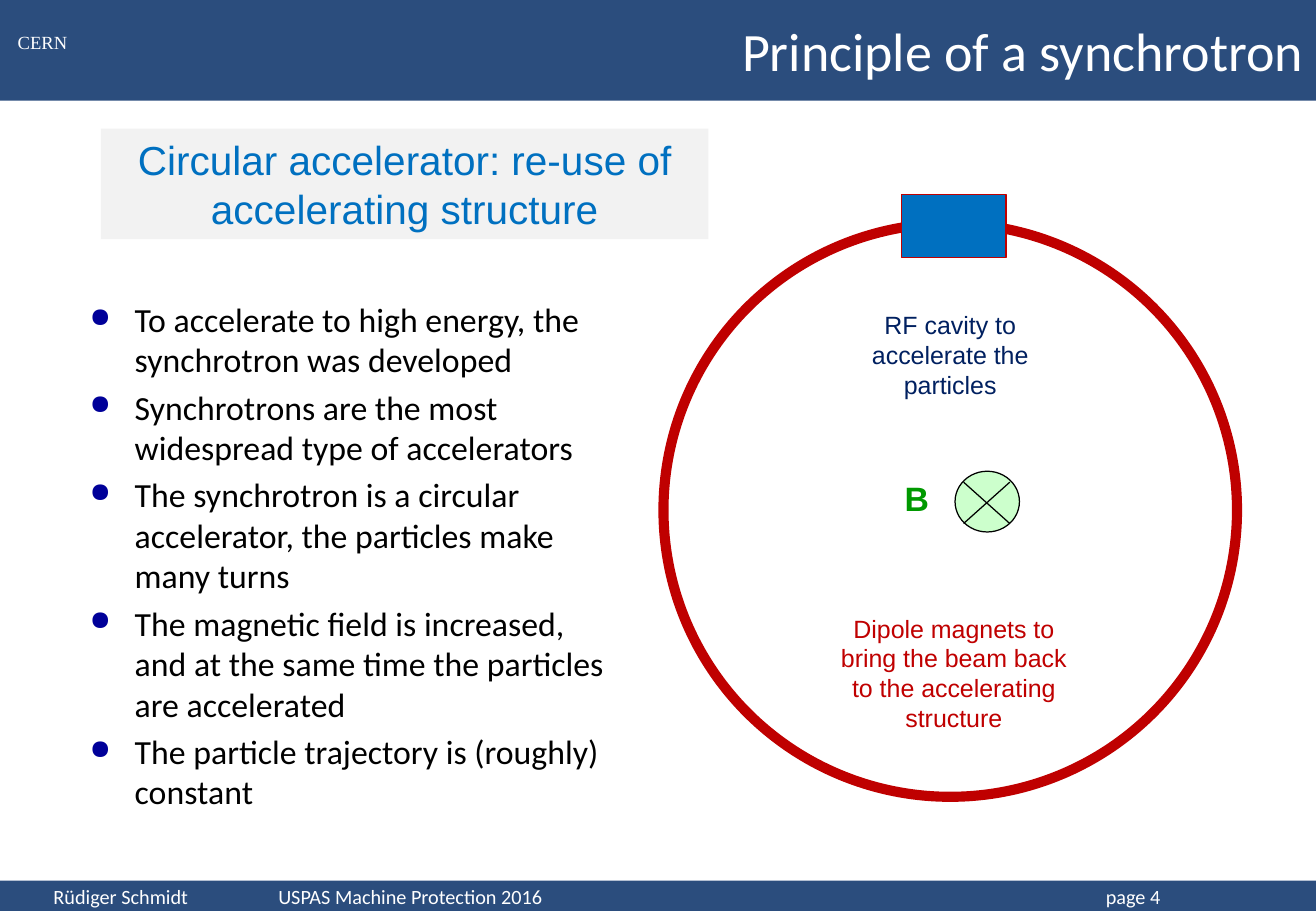
from pptx import Presentation
from pptx.util import Inches, Pt
from pptx.dml.color import RGBColor
from pptx.enum.shapes import MSO_SHAPE, MSO_CONNECTOR
from pptx.enum.text import PP_ALIGN, MSO_ANCHOR
from pptx.oxml.ns import qn
from lxml.etree import SubElement

THEME = {
    "navy": "062F67", "white": "FFFFFF", "black": "000000", "bullet": "000099",
    "ring": "BF0000", "red": "C00000", "blue": "0070C0", "ink": "002060",
    "pale": "F2F2F2", "green": "009900", "mint": "CCFFCC",
    "title": 32, "head": 24, "body": 20, "label": 14.8, "foot": 12, "tag": 11,
}


def draw(kind, area, fill=None, line=None, width=0.75):
    shape = slide.shapes.add_shape(kind, *map(Inches, area))
    shape.shadow.inherit = False
    if fill:
        shape.fill.solid()
        shape.fill.fore_color.rgb = RGBColor.from_string(THEME[fill])
    else:
        shape.fill.background()
    if line:
        shape.line.color.rgb = RGBColor.from_string(THEME[line])
        shape.line.width = Pt(width)
    else:
        shape.line.fill.background()
    return shape


def write(area, text, size, color, face="Arial", align=PP_ALIGN.CENTER, fill=None):
    box = slide.shapes.add_textbox(*map(Inches, area))
    if fill:
        box.fill.solid()
        box.fill.fore_color.rgb = RGBColor.from_string(THEME[fill])
    frame = box.text_frame
    frame.word_wrap = True
    frame.vertical_anchor = MSO_ANCHOR.MIDDLE
    frame.text = text
    for para in frame.paragraphs:
        para.alignment = align
        para.font.name = face
        para.font.size = Pt(THEME[size])
        para.font.color.rgb = RGBColor.from_string(THEME[color])
    return frame


deck = Presentation()
deck.slide_width = Inches(10.83)
deck.slide_height = Inches(7.5)
slide = deck.slides.add_slide(deck.slide_layouts[6])

for top, height in [(0, 0.83), (7.25, 0.25)]:
    band = draw(MSO_SHAPE.RECTANGLE, (0, top, 10.83, height), "navy")
    tint = band.fill._xPr.find(qn("a:solidFill"))[0]
    SubElement(tint, qn("a:alpha"), val="85000")

write((-0.01, 0.2, 0.72, 0.29), "CERN", "tag", "white", "Times New Roman")
write((0.9, 0, 9.93, 0.83), "Principle of a synchrotron", "title", "white",
      "Calibri", PP_ALIGN.RIGHT)

foot = write((0, 7.25, 10.65, 0.26),
             "Rüdiger Schmidt\tUSPAS Machine Protection 2016\tpage 4",
             "foot", "white", "Calibri", PP_ALIGN.LEFT)
foot.margin_left = Inches(0.44)
foot.margin_top = foot.margin_bottom = 0
props = foot.paragraphs[0]._p.get_or_add_pPr()
tabs = SubElement(props, qn("a:tabLst"))
props.insert(0, tabs)
for stop in (1.85, 8.66):
    SubElement(tabs, qn("a:tab"), pos=str(Inches(stop)), algn="l")

points = [
    "To accelerate to high energy, the synchrotron was developed",
    "Synchrotrons are the most widespread type of accelerators",
    "The synchrotron is a circular accelerator, the particles make many turns",
    "The magnetic field is increased, and at the same time the particles are accelerated",
    "The particle trajectory is (roughly) constant",
]
body = write((0.64, 2.41, 4.51, 4.4), "\n".join(points), "body", "black",
             "Calibri", PP_ALIGN.LEFT, "white")
body.vertical_anchor = MSO_ANCHOR.TOP
for index, para in enumerate(body.paragraphs):
    para.space_before = Pt(4 if index else 0)
    props = para._p.get_or_add_pPr()
    props.set("marL", str(Inches(0.37)))
    props.set("indent", str(Inches(-0.37)))
    color = SubElement(props, qn("a:buClr"))
    SubElement(color, qn("a:srgbClr"), val=THEME["bullet"])
    size = SubElement(props, qn("a:buSzPct"), val="80000")
    mark = SubElement(props, qn("a:buChar"), char="●")
    final = props.find(qn("a:defRPr"))
    for part in (color, size, mark):
        final.addprevious(part)

ring = draw(MSO_SHAPE.ARC, (5.46, 1.84, 4.72, 4.72), line="ring", width=6)
for index, angle in enumerate((276, 264)):
    ring.adjustments[index] = angle * 0.6
draw(MSO_SHAPE.RECTANGLE, (7.42, 1.6, 0.86, 0.52), "blue", "red")

write((6.75, 4.93, 2.2, 1.22),
      "Dipole magnets to bring the beam back to the accelerating structure",
      "label", "red")
write((6.72, 2.31, 2.2, 1.22), "RF cavity to accelerate the particles", "label", "ink")
write((0.83, 1.06, 5, 0.91), "Circular accelerator: re-use of accelerating structure",
      "head", "blue", fill="pale")
field = write((7.23, 3.88, 0.63, 0.44), "B", "body", "green")
field.paragraphs[0].font.bold = True

draw(MSO_SHAPE.OVAL, (7.86, 3.88, 0.53, 0.5), "mint", "black")
for start, end in [(7.93, 8.31), (8.31, 7.93)]:
    cross = slide.shapes.add_connector(
        MSO_CONNECTOR.STRAIGHT, Inches(start), Inches(3.97), Inches(end), Inches(4.31))
    cross.line.color.rgb = RGBColor.from_string(THEME["black"])
    cross.line.width = Pt(0.75)
    SubElement(cross._element.spPr, qn("a:effectLst"))

deck.save("out.pptx")
